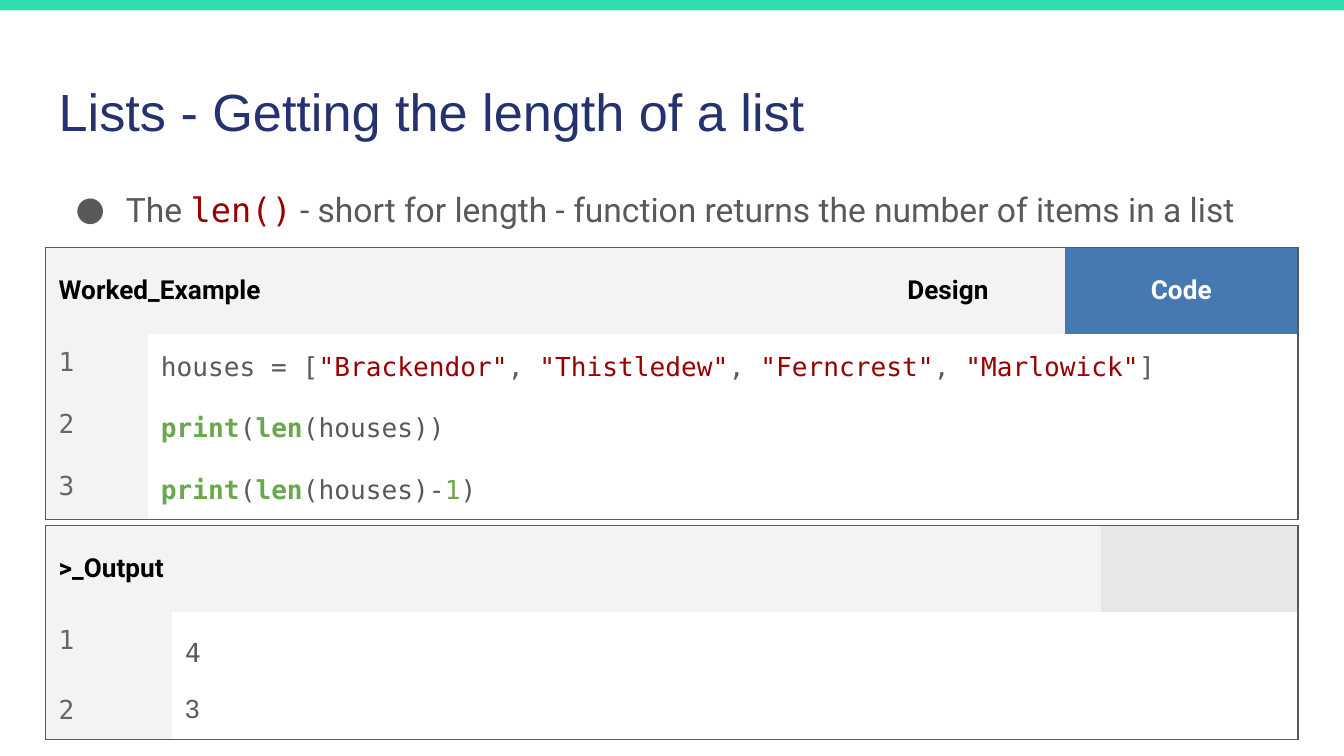
"""Build a slide on getting the length of a Python list."""
import lxml.etree
import pptx
import pptx.dml.color
import pptx.enum.shapes
import pptx.enum.text
import pptx.oxml
import pptx.oxml.ns
import pptx.util

Cm, Pt = pptx.util.Cm, pptx.util.Pt
RGB = pptx.dml.color.RGBColor
ALIGN = pptx.enum.text.PP_ALIGN
ANCHOR = pptx.enum.text.MSO_ANCHOR
qn = pptx.oxml.ns.qn

NAVY = RGB(0x25, 0x32, 0x6F)
TEAL = RGB(0x30, 0xDD, 0xAE)
GREY = RGB(0x59, 0x59, 0x59)
NUMBER = RGB(0x66, 0x66, 0x66)
RED = RGB(0x98, 0x00, 0x00)
GREEN = RGB(0x6A, 0xA8, 0x4F)
BLUE = RGB(0x46, 0x78, 0xB2)
PALE = RGB(0xF3, 0xF3, 0xF3)
SILVER = RGB(0xE7, 0xE7, 0xE7)
BLACK = RGB(0, 0, 0)
WHITE = RGB(0xFF, 0xFF, 0xFF)
SANS, BODY, MONO = "Arial", "Roboto", "DejaVu Sans Mono"
NO_STYLE = "{2D5ABB26-0587-4C30-8999-92F81FD0307C}"


class Deck:
    """Hold the style and the current slide."""

    left, width, inset = Cm(0.86), Cm(23.67), Cm(0.25)

    def __init__(self):
        self.prs = pptx.Presentation()
        self.prs.slide_width, self.prs.slide_height = Cm(25.4), Cm(14.29)
        self.s = self.prs.slides.add_slide(self.prs.slide_layouts[5])

    def runs(self, p, parts, size, font):
        for text, color, *style in parts:
            r = p.add_run()
            r.text = text
            r.font.size = Pt(size)
            r.font.name = style[0] if style else font
            r.font.bold = len(style) > 1
            r.font.color.rgb = color

    def frame(self, tf):
        tf.word_wrap = True
        tf.auto_size = pptx.enum.text.MSO_AUTO_SIZE.NONE
        tf.vertical_anchor = ANCHOR.TOP
        tf.margin_left = tf.margin_right = self.inset
        tf.margin_top = tf.margin_bottom = self.inset
        return tf.paragraphs[0]

    def title(self, text, top, height):
        sp = self.s.shapes.title
        sp.left, sp.top, sp.width, sp.height = self.left, top, self.width, height
        p = self.frame(sp.text_frame)
        p.alignment = ALIGN.LEFT
        self.runs(p, [(text, NAVY)], 28, SANS)

    def bar(self, height):
        sp = self.s.shapes.add_shape(
            pptx.enum.shapes.MSO_SHAPE.RECTANGLE, 0, 0, self.prs.slide_width, height)
        sp.shadow.inherit = False
        sp.fill.solid()
        sp.fill.fore_color.rgb = TEAL
        sp.line.fill.background()

    def bullet(self, parts, top, height):
        sp = self.s.shapes.add_textbox(self.left, top, self.width, height)
        p = self.frame(sp.text_frame)
        p.line_spacing = 1.15
        self.runs(p, parts, 18, BODY)
        pPr = p._p.get_or_add_pPr()
        pPr.set("marL", str(Cm(1.27)))
        pPr.set("indent", str(-Cm(0.95)))
        color = lxml.etree.SubElement(pPr, qn("a:buClr"))
        lxml.etree.SubElement(color, qn("a:srgbClr")).set("val", str(GREY))
        lxml.etree.SubElement(pPr, qn("a:buFont")).set("typeface", BODY)
        lxml.etree.SubElement(pPr, qn("a:buChar")).set("char", "●")

    def table(self, top, cols, rows):
        height = Cm(1.63) + Cm(1.09) * (rows - 1)
        tbl = self.s.shapes.add_table(
            rows, len(cols), self.left, top, self.width, height).table
        tbl.first_row = tbl.horz_banding = False
        tbl._tbl.tblPr.find(qn("a:tableStyleId")).text = NO_STYLE
        for col, width in zip(tbl.columns, cols):
            col.width = Cm(width)
        last = len(cols) - 1
        for i, row in enumerate(tbl.rows):
            row.height = Cm(1.09 if i else 1.63)
            for j, cell in enumerate(row.cells):
                right = j == last or (i > 0 and j > 0)
                edges = {"L": j == 0, "R": right, "T": i == 0, "B": i == rows - 1}
                self.borders(cell, [side for side, on in edges.items() if on])
                self.fill(cell, WHITE if i and j else PALE)
        tbl.cell(0, 0).merge(tbl.cell(0, 1))
        for i in range(1, rows):
            tbl.cell(i, 1).merge(tbl.cell(i, last))
            self.cell(tbl.cell(i, 0), [(str(i), NUMBER)])
        return tbl

    def borders(self, cell, sides):
        tcPr = cell._tc.get_or_add_tcPr()
        for side in sides:
            ln = lxml.etree.SubElement(tcPr, qn("a:ln" + side))
            ln.set("w", str(Pt(0.75)))
            solid = lxml.etree.SubElement(ln, qn("a:solidFill"))
            lxml.etree.SubElement(solid, qn("a:srgbClr")).set("val", str(GREY))

    def fill(self, cell, color):
        cell.fill.solid()
        cell.fill.fore_color.rgb = color

    def cell(self, cell, parts, font=MONO, spacing=None, after=None):
        cell.margin_left = cell.margin_right = self.inset
        cell.margin_top = cell.margin_bottom = self.inset
        p = cell.text_frame.paragraphs[0]
        if spacing:
            p.line_spacing = spacing
        if after:
            p.space_after = Pt(after)
        self.runs(p, parts, 14, font)

    def heading(self, cell, text, color=BLACK, align=ALIGN.LEFT):
        self.cell(cell, [(text, color, BODY, True)])
        cell.vertical_anchor = ANCHOR.MIDDLE
        cell.text_frame.paragraphs[0].alignment = align


def quoted_list(names):
    parts = [("houses = [", GREY)]
    for i, name in enumerate(names):
        if i:
            parts.append((",", GREY))
        parts.append((f'{" " if i else ""}"{name}"', RED))
    return parts + [("]", GREY)]


def main():
    deck = Deck()
    deck.title("Lists - Getting the length of a list", Cm(1.24), Cm(1.6))
    deck.bar(Cm(0.2))
    deck.bullet([("The ", GREY), ("len()", RED, MONO),
                 (" - short for length - function returns the number of items in a list",
                  GREY)], Cm(3.2), Cm(2.3))

    call = [("print", GREEN, MONO, True), ("(", GREY), ("len", GREEN, MONO, True)]
    lines = [
        quoted_list(["Brackendor", "Thistledew", "Ferncrest", "Marlowick"]),
        call + [("(houses))", GREY)],
        call + [("(houses)-", GREY), ("1", GREEN), (")", GREY)],
    ]
    code = deck.table(Cm(4.68), [1.93, 8.17, 4.75, 4.41, 4.41], 4)
    deck.heading(code.cell(0, 0), "Worked_Example")
    deck.heading(code.cell(0, 3), "Design", align=ALIGN.CENTER)
    deck.heading(code.cell(0, 4), "Code", WHITE, ALIGN.CENTER)
    deck.fill(code.cell(0, 4), BLUE)
    for i, parts in enumerate(lines, 1):
        deck.cell(code.cell(i, 1), parts, spacing=1.15, after=12)

    output = deck.table(Cm(9.93), [2.39, 10.03, 7.52, 3.73], 3)
    deck.heading(output.cell(0, 0), ">_Output")
    deck.fill(output.cell(0, 3), SILVER)
    deck.cell(output.cell(1, 1), [("4", GREY)], spacing=1.43)
    deck.cell(output.cell(2, 1), [("3", GREY)], SANS)
    deck.prs.save("out.pptx")


if __name__ == "__main__":
    main()
